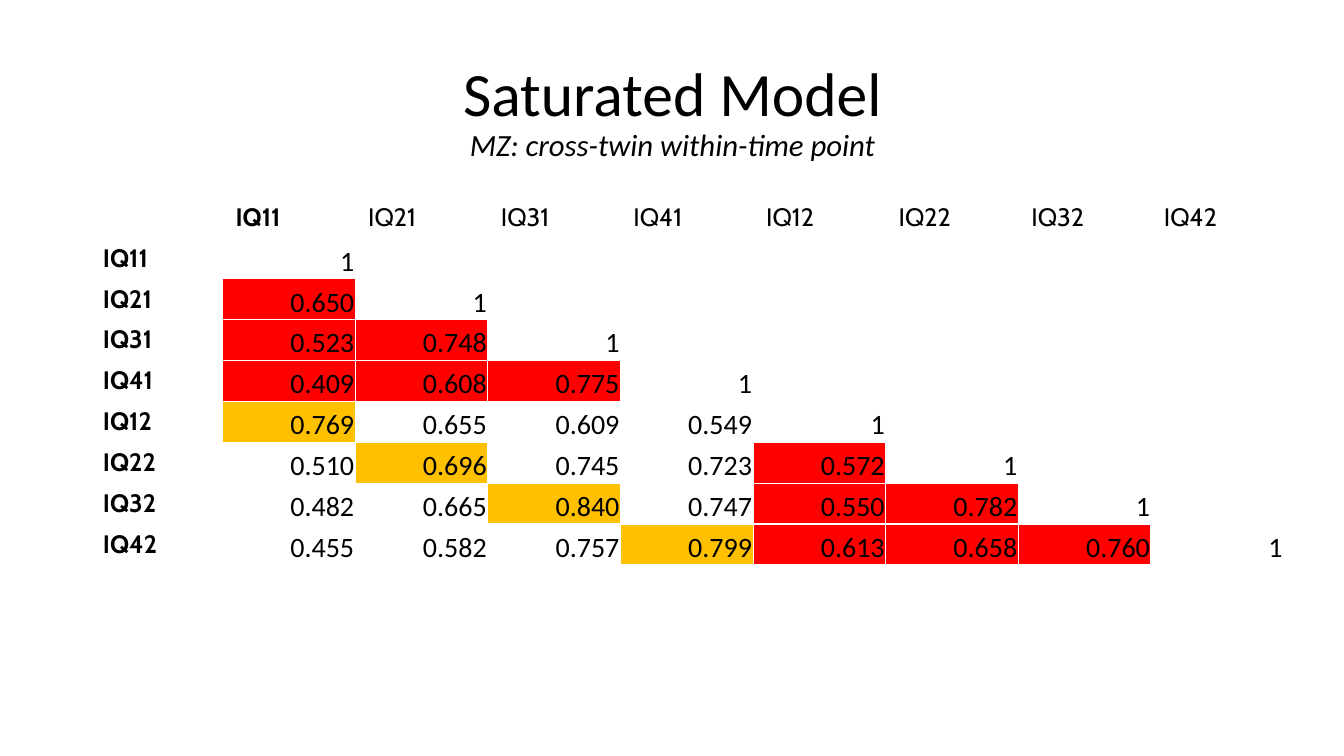
from lxml import etree
from pptx import Presentation
from pptx import util as u
from pptx.dml.color import RGBColor
from pptx.enum import text
from pptx.oxml.ns import qn

TITLE = "Saturated Model"
SUBTITLE = "MZ: cross-twin within-time point"
LABELS = ["IQ11", "IQ21", "IQ31", "IQ41", "IQ12", "IQ22", "IQ32", "IQ42"]
CORRELATIONS = [
    ["1"],
    ["0.650", "1"],
    ["0.523", "0.748", "1"],
    ["0.409", "0.608", "0.775", "1"],
    ["0.769", "0.655", "0.609", "0.549", "1"],
    ["0.510", "0.696", "0.745", "0.723", "0.572", "1"],
    ["0.482", "0.665", "0.840", "0.747", "0.550", "0.782", "1"],
    ["0.455", "0.582", "0.757", "0.799", "0.613", "0.658", "0.760", "1"],
]
TIME_POINTS = 4
COLORS = {
    "text": "000000",
    "border": "FFFFFF",
    "within_twin": "FF0000",
    "cross_twin": "FFC000",
}
SLIDE = (1344, 756)
TITLE_BOX = (93, 40, 1159, 146)
TABLE_BOX = (90, 197, 1194, 368)
LABEL_INSETS = (13, 5, 13, 5)
VALUE_INSETS = (1, 1, 1, 0)
EMU_PER_PX = 12192000 / SLIDE[0]


def px(n):
    return u.Emu(round(n * EMU_PER_PX))


def write(p, words, size, font="Calibri", bold=False, italic=False,
          align=text.PP_ALIGN.LEFT):
    p.alignment = align
    r = p.add_run()
    r.text = words
    f = r.font
    f.name, f.size, f.bold, f.italic = font, u.Pt(size), bold, italic
    f.color.rgb = RGBColor.from_string(COLORS["text"])


def set_insets(box, insets):
    box.margin_left, box.margin_top, box.margin_right, box.margin_bottom = map(px, insets)


def set_borders(cell, bottom):
    tc_pr = cell._tc.get_or_add_tcPr()
    for side, points in (("L", 1), ("R", 1), ("T", 1), ("B", bottom)):
        ln = etree.SubElement(tc_pr, qn("a:ln" + side), w=str(u.Pt(points)))
        fill = etree.SubElement(ln, qn("a:solidFill"))
        etree.SubElement(fill, qn("a:srgbClr"), val=COLORS["border"])


def fill_name(i, j):
    if i == j + TIME_POINTS:
        return "cross_twin"
    if i > j and i // TIME_POINTS == j // TIME_POINTS:
        return "within_twin"
    return None


def add_title(s):
    tf = s.shapes.add_textbox(*map(px, TITLE_BOX)).text_frame
    tf.word_wrap = True
    tf.vertical_anchor = text.MSO_ANCHOR.MIDDLE
    p = tf.paragraphs[0]
    p.line_spacing = 0.9
    write(p, TITLE, 44, align=text.PP_ALIGN.CENTER)
    p.add_line_break()
    write(p, SUBTITLE, 22, italic=True, align=text.PP_ALIGN.CENTER)


def add_matrix(s):
    n = len(LABELS) + 1
    table = s.shapes.add_table(n, n, *map(px, TABLE_BOX)).table
    table.first_row = table.horz_banding = False
    for row in range(n):
        for col in range(n):
            cell = table.cell(row, col)
            set_borders(cell, 1 if row else 3)
            cell.fill.background()
            p = cell.text_frame.paragraphs[0]
            i, j = row - 1, col - 1
            if (row == 0) != (col == 0):
                set_insets(cell, LABEL_INSETS)
                write(p, LABELS[max(i, j)], 18, font="Cabin", bold=col < 2)
            elif row and j <= i:
                set_insets(cell, VALUE_INSETS)
                cell.vertical_anchor = text.MSO_ANCHOR.BOTTOM
                write(p, CORRELATIONS[i][j], 20, align=text.PP_ALIGN.RIGHT)
                name = fill_name(i, j)
                if name:
                    cell.fill.solid()
                    cell.fill.fore_color.rgb = RGBColor.from_string(COLORS[name])


def main():
    prs = Presentation()
    prs.slide_width, prs.slide_height = map(px, SLIDE)
    s = prs.slides.add_slide(prs.slide_layouts[6])
    add_title(s)
    add_matrix(s)
    prs.save("out.pptx")


if __name__ == "__main__":
    main()
